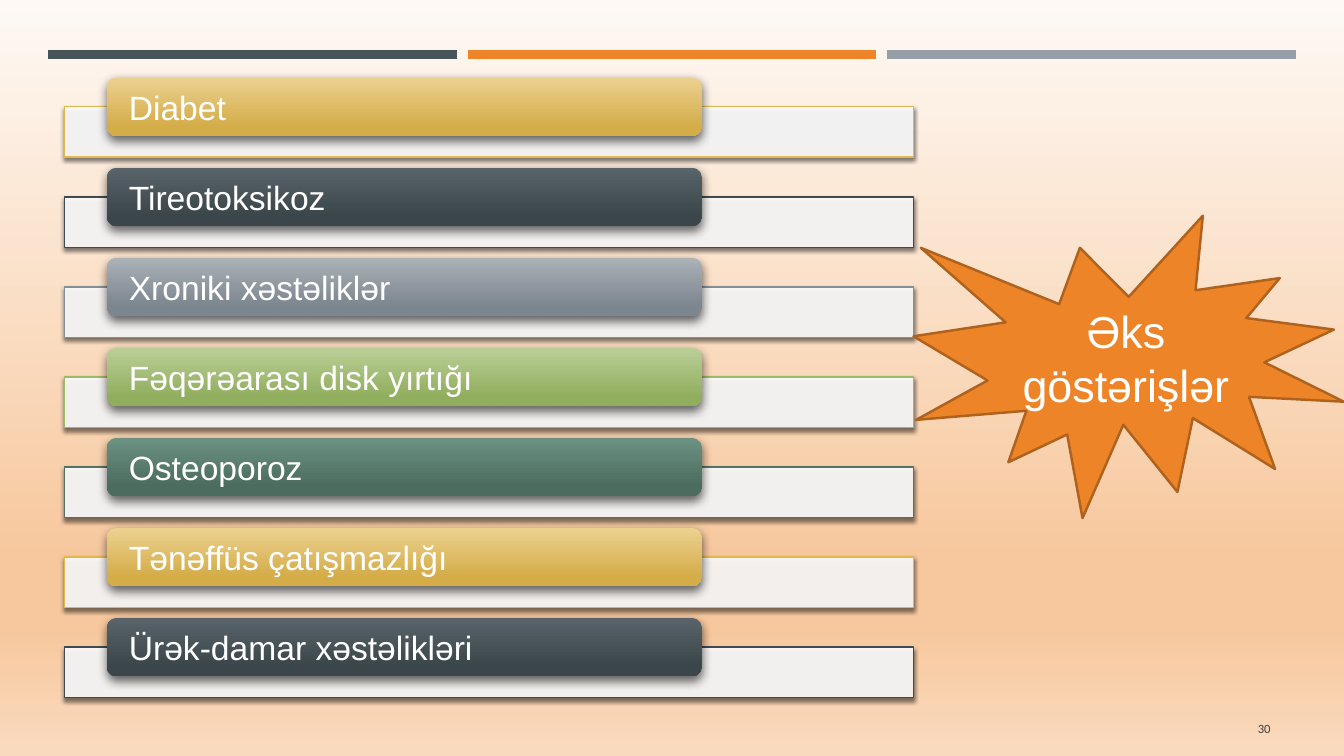
import pptx
import pptx.dml.color
import pptx.enum.shapes
import pptx.enum.text
import pptx.oxml
import pptx.oxml.ns
import pptx.util
from pptx.util import Inches

SHAPES = pptx.enum.shapes.MSO_SHAPE
ALIGN = pptx.enum.text.PP_ALIGN

HEADER_COLORS = ["465359", "ED8428", "969FA7"]
# Outline, gradient top, gradient bottom
PALETTE = [
    ("E1B850", "ECD190", "D4AD49"),
    ("3F4B50", "58646A", "3B464B"),
    ("858F99", "ABB2B8", "7C868F"),
    ("9BB966", "BACF97", "91AE5E"),
    ("517366", "6B9182", "4C6C5F"),
]
CONTRAINDICATIONS = [
    "Diabet",
    "Tireotoksikoz",
    "Xroniki xəstəliklər",
    "Fəqərəarası disk yırtığı",
    "Osteoporoz",
    "Tənəffüs çatışmazlığı",
    "Ürək-damar xəstəlikləri",
]
FIRST_ROW_TOP = 0.77
ROW_PITCH = 5.36 / 6


def rgb(color):
    return pptx.dml.color.RGBColor.from_string(color)


def drawing_xml(tag, attributes, content=""):
    return pptx.oxml.parse_xml(
        f'<a:{tag} {pptx.oxml.ns.nsdecls("a")} {attributes}>{content}</a:{tag}>'
    )


def set_gradient(owner, fill, stops):
    """Fill a slide background or shape from top to bottom with (percent, color) stops."""
    fill.gradient()
    fill.gradient_angle = 270
    stop_list = owner.element.find(".//" + pptx.oxml.ns.qn("a:gsLst"))
    for old_stop in list(stop_list):
        stop_list.remove(old_stop)
    for percent, color in stops:
        stop_list.append(
            drawing_xml("gs", f'pos="{percent * 1000}"', f'<a:srgbClr val="{color}"/>')
        )


def add_shadow(shape, alpha, blur, distance, angle):
    effects = shape.element.spPr.find(pptx.oxml.ns.qn("a:effectLst"))
    effects.append(drawing_xml(
        "outerShdw",
        f'blurRad="{pptx.util.Pt(blur)}" dist="{pptx.util.Pt(distance)}" '
        f'dir="{angle * 60000}" algn="ctr" rotWithShape="0"',
        f'<a:srgbClr val="000000"><a:alpha val="{alpha * 1000}"/></a:srgbClr>',
    ))


def add_shape(slide, kind, left, top, width, height):
    shape = slide.shapes.add_shape(
        kind, Inches(left), Inches(top), Inches(width), Inches(height)
    )
    shape.shadow.inherit = False
    return shape


def set_outline(shape, color, width):
    shape.line.color.rgb = rgb(color)
    shape.line.width = pptx.util.Pt(width)


def set_text(shape, text, size, color, alignment, font="Arial"):
    frame = shape.text_frame
    frame.word_wrap = True
    frame.vertical_anchor = pptx.enum.text.MSO_ANCHOR.MIDDLE
    frame.text = text
    paragraph = frame.paragraphs[0]
    paragraph.alignment = alignment
    run_font = paragraph.runs[0].font
    run_font.name = font
    run_font.size = pptx.util.Pt(size)
    run_font.color.rgb = rgb(color)


def add_header_line(slide, left, color):
    y = Inches(0.54)
    line = slide.shapes.add_connector(
        pptx.enum.shapes.MSO_CONNECTOR.STRAIGHT, Inches(left), y, Inches(left + 4.05), y
    )
    set_outline(line, color, 6.5)
    line.element.spPr.append(drawing_xml("effectLst", ""))


def add_row(slide, top, text, colors):
    outline, gradient_top, gradient_bottom = colors
    panel = add_shape(slide, SHAPES.RECTANGLE, 0.64, top + 0.29, 8.42, 0.5)
    panel.fill.solid()
    panel.fill.fore_color.rgb = rgb("FFFFFF")
    fill_color = panel.element.spPr.find(".//" + pptx.oxml.ns.qn("a:srgbClr"))
    fill_color.append(drawing_xml("alpha", 'val="90000"'))
    set_outline(panel, outline, 1)
    add_shadow(panel, 55, 3, 2, 90)

    label = add_shape(slide, SHAPES.ROUNDED_RECTANGLE, 1.06, top, 5.9, 0.58)
    set_gradient(label, label.fill, [(0, gradient_top), (84, gradient_bottom)])
    label.line.fill.background()
    add_shadow(label, 60, 7, 3, 84)
    set_text(label, text, 24, "FFFFFF", ALIGN.LEFT)
    frame = label.text_frame
    frame.margin_left = frame.margin_right = Inches(0.19)
    frame.margin_top = frame.margin_bottom = 0


def add_burst(slide, text):
    burst = add_shape(slide, SHAPES.EXPLOSION1, 9.06, 2.14, 4.27, 3)
    burst.fill.solid()
    burst.fill.fore_color.rgb = rgb("ED8428")
    set_outline(burst, "AF621E", 1.75)
    set_text(burst, text, 32, "FFFFFF", ALIGN.CENTER)


def add_slide_number(slide, number):
    box = slide.shapes.add_textbox(
        Inches(11.55), Inches(7.03), Inches(1.15), Inches(0.4)
    )
    set_text(box, number, 9, "404040", ALIGN.RIGHT, "Calibri")


def main():
    presentation = pptx.Presentation()
    presentation.slide_width = Inches(13.33)
    presentation.slide_height = Inches(7.5)
    slide = presentation.slides.add_slide(presentation.slide_layouts[6])
    set_gradient(slide, slide.background.fill, [
        (0, "FEF9F4"), (74, "F7C89E"), (83, "F7C89E"), (100, "FADABF"),
    ])
    for index, color in enumerate(HEADER_COLORS):
        add_header_line(slide, 0.48 + index * 4.16, color)
    add_slide_number(slide, "30")
    for index, text in enumerate(CONTRAINDICATIONS):
        top = FIRST_ROW_TOP + index * ROW_PITCH
        add_row(slide, top, text, PALETTE[index % len(PALETTE)])
    add_burst(slide, "Əks göstərişlər")
    presentation.save("out.pptx")


if __name__ == "__main__":
    main()
